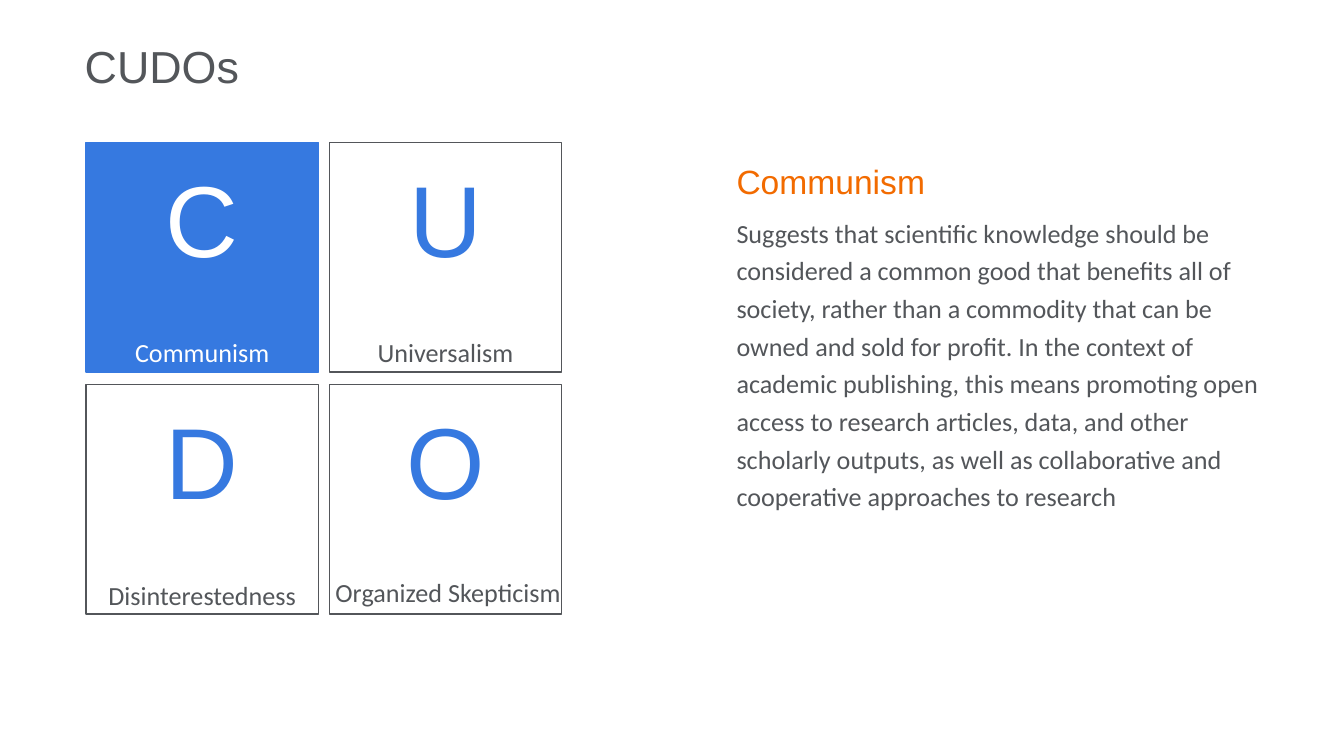
from dataclasses import dataclass

from pptx import Presentation
from pptx.dml.color import RGBColor
from pptx.enum.shapes import MSO_SHAPE
from pptx.enum.text import MSO_ANCHOR, MSO_AUTO_SIZE, PP_ALIGN
from pptx.oxml.ns import qn
from pptx.util import Inches, Pt

RECTANGLE = MSO_SHAPE.RECTANGLE
TOP, MIDDLE = MSO_ANCHOR.TOP, MSO_ANCHOR.MIDDLE
LEFT, CENTER = PP_ALIGN.LEFT, PP_ALIGN.CENTER
NO_AUTOFIT = MSO_AUTO_SIZE.NONE


@dataclass(frozen=True)
class Theme:
    blue: RGBColor = RGBColor.from_string("3679E0")
    gray: RGBColor = RGBColor.from_string("53565A")
    orange: RGBColor = RGBColor.from_string("F26B00")
    white: RGBColor = RGBColor.from_string("FFFFFF")
    heading_font: str = "Arial"
    body_font: str = "Calibri"
    title_size: Pt = Pt(24)
    letter_size: Pt = Pt(54)
    heading_size: Pt = Pt(18)
    body_size: Pt = Pt(14)


theme = Theme()


def prepare_frame(shape, wrap, anchor=TOP):
    """Remove the margins and return the text frame."""
    frame = shape.text_frame
    frame.margin_left = frame.margin_top = frame.margin_right = frame.margin_bottom = 0
    frame.auto_size = NO_AUTOFIT
    frame.word_wrap = wrap
    frame.vertical_anchor = anchor
    return frame


def write(paragraph, text, font_name, size, color, alignment):
    paragraph.text = text
    paragraph.alignment = alignment
    paragraph.font.name = font_name
    paragraph.font.size = size
    paragraph.font.color.rgb = color


presentation = Presentation()
presentation.slide_width = Inches(10)
presentation.slide_height = Inches(10) * 9 // 16
slide = presentation.slides.add_slide(presentation.slide_layouts[1])

# Title
title = slide.shapes.title
title.left, title.top = Inches(0.63), Inches(0.21)
title.width, title.height = Inches(8.55), Inches(0.55)
title_frame = prepare_frame(title, True, MIDDLE)
write(title_frame.paragraphs[0], "CUDOs", theme.heading_font, theme.title_size, theme.gray, LEFT)

# Two by two grid of principles, the first one highlighted:
# letter, width of its box, name, left and top of the name within the tile
principles = [
    ("C", 0.47, "Communism", 0, 1.44),
    ("U", 0.83, "Universalism", 0, 1.44),
    ("D", 0.65, "Disinterestedness", 0, 1.45),
    ("O", 0.47, "Organized Skepticism", 0.02, 1.43),
]
tile_width, tile_height = Inches(1.73), Inches(1.71)
for index, (letter, letter_width, name, name_left, name_top) in enumerate(principles):
    row, column = divmod(index, 2)
    left = Inches(0.64 + column * 1.81)
    top = Inches(1.06 + row * 1.8)
    active = index == 0

    tile = slide.shapes.add_shape(RECTANGLE, left, top, tile_width, tile_height)
    tile.shadow.inherit = False
    tile.fill.solid()
    tile.fill.fore_color.rgb = theme.blue if active else theme.white
    tile.line.color.rgb = theme.blue if active else theme.gray
    tile.line.width = Pt(0.75)

    letter_left = left + (tile_width - Inches(letter_width)) // 2
    letter_box = slide.shapes.add_textbox(
        letter_left, top + Inches(0.11), Inches(letter_width), Inches(1.36))
    write(prepare_frame(letter_box, False).paragraphs[0], letter, theme.heading_font,
          theme.letter_size, theme.white if active else theme.blue, CENTER)

    name_box = slide.shapes.add_textbox(
        left + Inches(name_left), top + Inches(name_top), tile_width, Inches(0.27))
    write(prepare_frame(name_box, False).paragraphs[0], name, theme.body_font,
          theme.body_size, theme.white if active else theme.gray, CENTER)

# Explanation of the highlighted principle
body = slide.placeholders[1]
body.left, body.top = Inches(5.48), Inches(1.14)
body.width, body.height = Inches(3.89), Inches(3.6)
body_frame = prepare_frame(body, True)
explanation = (
    "Suggests that scientific knowledge should be considered a common good that benefits "
    "all of society, rather than a commodity that can be owned and sold for profit. In the "
    "context of academic publishing, this means promoting open access to research articles, "
    "data, and other scholarly outputs, as well as collaborative and cooperative approaches "
    "to research"
)
body_paragraphs = [
    ("Communism", theme.heading_font, theme.heading_size, theme.orange, 0),
    (explanation, theme.body_font, theme.body_size, theme.gray, 5),
]
body_frame.add_paragraph()
for paragraph, (text, font_name, size, color, space_before) in zip(
        body_frame.paragraphs, body_paragraphs):
    properties = paragraph._p.get_or_add_pPr()
    properties.set("marL", "0")
    properties.set("indent", "0")
    properties.append(properties.makeelement(qn("a:buNone"), {}))
    write(paragraph, text, font_name, size, color, LEFT)
    paragraph.line_spacing = 1.2
    paragraph.space_before = Pt(space_before)

presentation.save("out.pptx")
